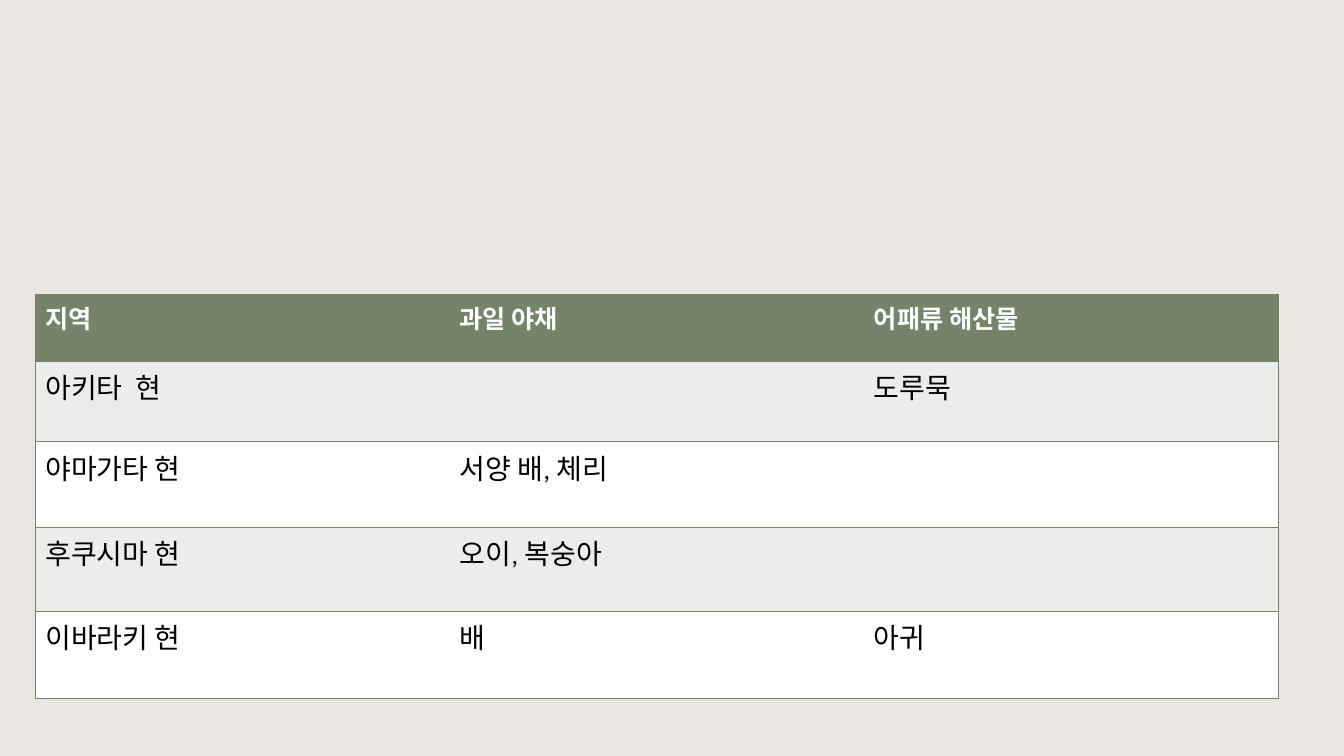
from dataclasses import dataclass

from lxml import etree
from pptx import Presentation
from pptx import util as u
from pptx.dml.color import RGBColor
from pptx.enum import shapes
from pptx.oxml.ns import qn
from pptx.slide import Slide
from pptx.table import Table, _Cell


@dataclass(frozen=True)
class Theme:
    font: str = "Calibri"
    backdrop: str = "E0DAD4"
    backdrop_opacity: int = 70
    green: str = "758468"
    band: str = "ECEDEB"
    white: str = "FFFFFF"
    black: str = "000000"
    header_size: int = 18
    body_size: int = 20
    border_width: int = 1


@dataclass(frozen=True)
class Region:
    height: float
    name: str
    produce: str = ""
    seafood: str = ""

    @property
    def entries(self) -> tuple[str, str, str]:
        return self.name, self.produce, self.seafood


@dataclass(frozen=True)
class RowLook:
    fill: str
    ink: str
    size: int
    bold: bool


THEME = Theme()
HEADER = RowLook(THEME.green, THEME.white, THEME.header_size, True)
BANDS = (
    RowLook(THEME.white, THEME.black, THEME.body_size, False),
    RowLook(THEME.band, THEME.black, THEME.body_size, False),
)
REGIONS = (
    Region(1.68, "지역", "과일 야채", "어패류 해산물"),
    Region(2.03, "아키타  현", seafood="도루묵"),
    Region(2.16, "야마가타 현", "서양 배, 체리"),
    Region(2.11, "후쿠시마 현", "오이, 복숭아"),
    Region(2.21, "이바라키 현", "배", "아귀"),
)
COLUMN_COUNT = 3
COLUMN_WIDTH = 10.44
PLAIN_STYLE = "{2D5ABB26-0587-4C30-8999-92F81FD0307C}"


def add_backdrop(slide: Slide, width: int, height: int) -> None:
    backdrop = slide.shapes.add_shape(
        shapes.MSO_SHAPE.RECTANGLE, 0, 0, width, height
    )
    backdrop.shadow.inherit = False
    backdrop.line.fill.background()
    backdrop.fill.solid()
    backdrop.fill.fore_color.rgb = RGBColor.from_string(THEME.backdrop)
    tint = backdrop.fill._xPr.find(qn("a:solidFill"))[0]
    opacity = etree.SubElement(tint, qn("a:alpha"))
    opacity.set("val", str(THEME.backdrop_opacity * 1000))


def add_borders(cell: _Cell, sides: str) -> None:
    properties = cell._tc.get_or_add_tcPr()
    for position, side in enumerate(sides):
        border = etree.Element(qn(f"a:ln{side}"))
        border.set("w", str(u.Pt(THEME.border_width)))
        paint = etree.SubElement(border, qn("a:solidFill"))
        etree.SubElement(paint, qn("a:srgbClr")).set("val", THEME.green)
        properties.insert(position, border)


def fill_cell(cell: _Cell, entry: str, look: RowLook, sides: str) -> None:
    cell.fill.solid()
    cell.fill.fore_color.rgb = RGBColor.from_string(look.fill)
    add_borders(cell, sides)
    paragraph = cell.text_frame.paragraphs[0]
    if entry:
        paragraph.text = entry
    paragraph.font.name = THEME.font
    paragraph.font.size = u.Pt(look.size)
    paragraph.font.bold = look.bold
    paragraph.font.color.rgb = RGBColor.from_string(look.ink)


def fill_regions(specialties: Table) -> None:
    for row, region in enumerate(REGIONS):
        specialties.rows[row].height = u.Cm(region.height)
        look = BANDS[row % 2] if row else HEADER
        for column, entry in enumerate(region.entries):
            left = "L" if column == 0 else ""
            right = "R" if column == COLUMN_COUNT - 1 else ""
            fill_cell(specialties.cell(row, column), entry, look, left + right + "TB")


def add_specialties(slide: Slide) -> None:
    specialties = slide.shapes.add_table(
        len(REGIONS),
        COLUMN_COUNT,
        u.Cm(0.89),
        u.Cm(7.42),
        u.Cm(COLUMN_WIDTH * COLUMN_COUNT),
        u.Cm(sum(region.height for region in REGIONS)),
    ).table
    specialties.first_row = False
    specialties.horz_banding = False
    specialties._tbl.tblPr.find(qn("a:tableStyleId")).text = PLAIN_STYLE
    fill_regions(specialties)


def main() -> None:
    deck = Presentation()
    deck.slide_width = u.Cm(33.87)
    deck.slide_height = u.Cm(19.05)
    slide = deck.slides.add_slide(deck.slide_layouts[6])
    add_backdrop(slide, deck.slide_width, deck.slide_height)
    add_specialties(slide)
    deck.save("out.pptx")


if __name__ == "__main__":
    main()
